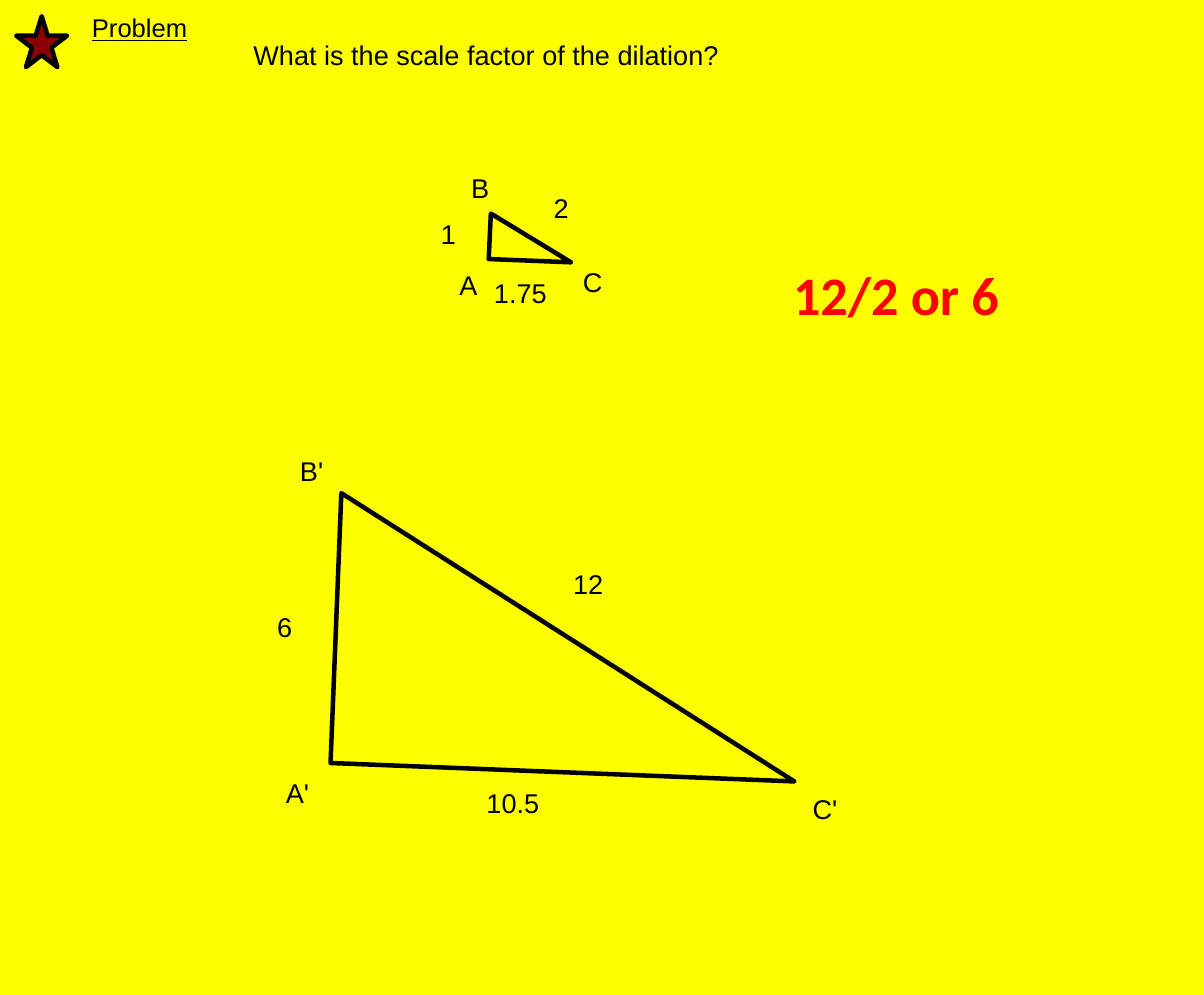
from dataclasses import dataclass

from lxml import etree
from pptx import Presentation
from pptx.dml.color import RGBColor
from pptx.enum.shapes import MSO_SHAPE
from pptx.enum.text import MSO_AUTO_SIZE
from pptx.oxml.ns import qn
from pptx.shapes.autoshape import Shape
from pptx.slide import Slide
from pptx.util import Inches, Pt

STAR = MSO_SHAPE.STAR_5_POINT
GROW = MSO_AUTO_SIZE.SHAPE_TO_FIT_TEXT
BLACK, RED, DARK_RED, YELLOW = "000000", "FF0000", "8B0000", "FFFF00"
BLANK_LAYOUT = 6


@dataclass(frozen=True)
class Label:
    text: str
    left: float
    top: float
    width: float
    height: float = 0.4
    size: float = 18
    font: str = "Arial"
    color: str = BLACK
    bold: bool = False
    underline: bool = False


@dataclass(frozen=True)
class Triangle:
    a: tuple[float, float]
    b: tuple[float, float]
    c: tuple[float, float]


TRIANGLES = [
    Triangle(a=(3.05, 7.04), b=(3.15, 4.55), c=(7.33, 7.21)),
    Triangle(a=(4.51, 2.39), b=(4.53, 1.97), c=(5.27, 2.42)),
]

LABELS = [
    Label("Problem", 0.75, 0.06, 1.67, 0.39, size=17, underline=True),
    Label("What is the scale factor of the dilation?", 2.24, 0.31, 6.05),
    Label("A", 4.14, 2.43, 0.37),
    Label("B", 4.25, 1.53, 0.37),
    Label("C", 5.28, 2.4, 0.39),
    Label("A'", 2.54, 7.11, 0.43),
    Label("B'", 2.67, 4.14, 0.43),
    Label("C'", 7.4, 7.26, 0.45),
    Label("1", 3.97, 1.96, 0.33),
    Label("2", 5.01, 1.72, 0.33),
    Label("1.75", 4.46, 2.5, 0.81),
    Label("6", 2.46, 5.58, 0.33),
    Label("12", 5.19, 5.19, 0.52),
    Label("10.5", 4.39, 7.21, 0.81),
    Label("12/2 or 6", 7.22, 2.36, 2.83, 0.71, 36, "Calibri", RED, bold=True),
]


def rgb(value: str) -> RGBColor:
    """Turn a hex string into a colour."""
    return RGBColor.from_string(value)


def outline(shape: Shape) -> None:
    """Give a shape a thick black line with round corners and no shadow."""
    shape.shadow.inherit = False
    shape.line.color.rgb = rgb(BLACK)
    shape.line.width = Pt(3)
    etree.SubElement(shape.line._get_or_add_ln(), qn("a:round"))


def draw_triangle(slide: Slide, triangle: Triangle) -> None:
    """Draw an unfilled triangle through its three vertices."""
    c, a, b = (
        (Inches(x), Inches(y)) for x, y in (triangle.c, triangle.a, triangle.b)
    )
    builder = slide.shapes.build_freeform(*c)
    builder.add_line_segments([a, b], close=True)
    shape = builder.convert_to_shape()
    shape.fill.background()
    outline(shape)


def draw_star(slide: Slide) -> None:
    """Draw the dark red star in the top left corner."""
    star = slide.shapes.add_shape(
        STAR, Inches(0.15), Inches(0.15), Inches(0.47), Inches(0.47)
    )
    star.fill.solid()
    star.fill.fore_color.rgb = rgb(DARK_RED)
    outline(star)


def draw_label(slide: Slide, label: Label) -> None:
    """Write one line of text in its own box."""
    box = slide.shapes.add_textbox(
        Inches(label.left), Inches(label.top), Inches(label.width), Inches(label.height)
    )
    frame = box.text_frame
    frame.word_wrap = True
    frame.auto_size = GROW
    run = frame.paragraphs[0].add_run()
    run.text = label.text
    run.font.name = label.font
    run.font.size = Pt(label.size)
    run.font.bold = label.bold
    run.font.underline = label.underline
    run.font.color.rgb = rgb(label.color)


def main() -> None:
    """Build the dilation problem slide and save it."""
    deck = Presentation()
    deck.slide_width, deck.slide_height = Inches(11.11), Inches(9.18)
    slide = deck.slides.add_slide(deck.slide_layouts[BLANK_LAYOUT])
    slide.background.fill.solid()
    slide.background.fill.fore_color.rgb = rgb(YELLOW)
    for triangle in TRIANGLES:
        draw_triangle(slide, triangle)
    draw_star(slide)
    for label in LABELS:
        draw_label(slide, label)
    deck.save("out.pptx")


if __name__ == "__main__":
    main()
